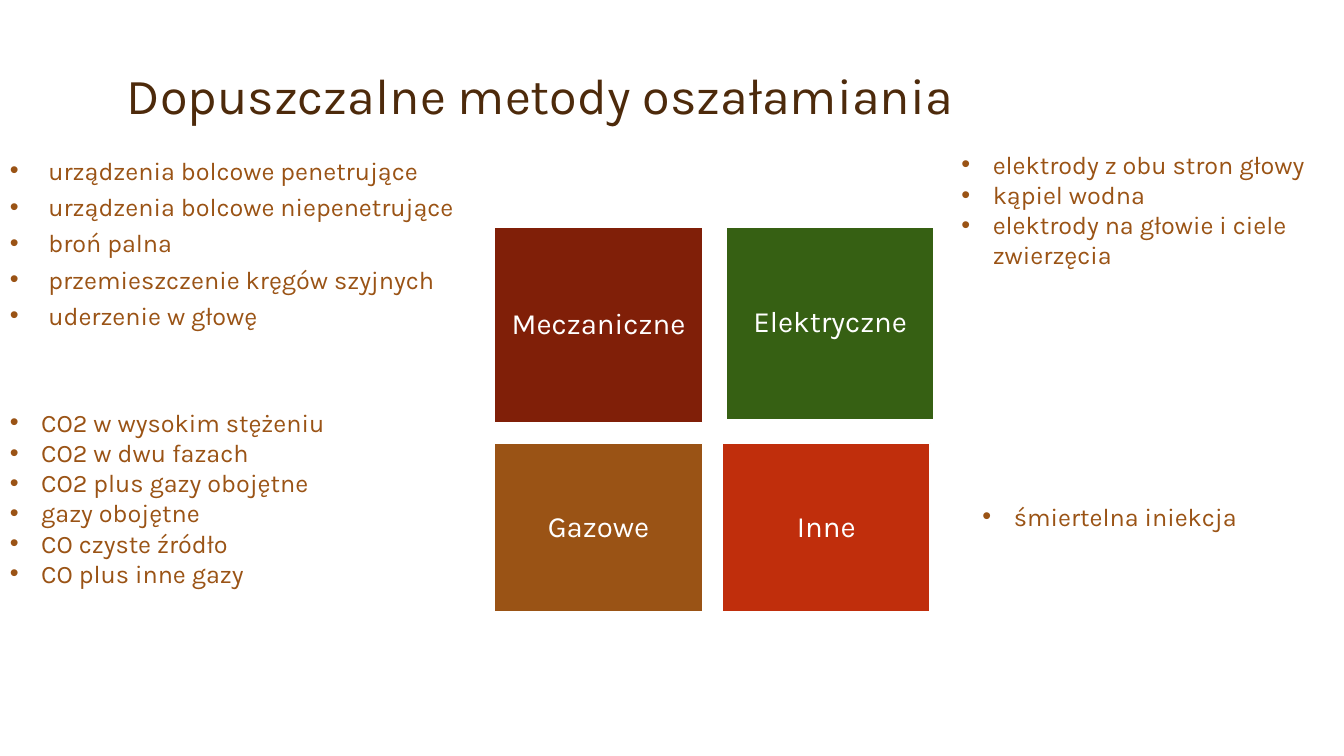
"""Build the slide on permitted stunning methods."""
import pptx
import pptx.util
import pptx.dml.color
import pptx.enum.shapes
import pptx.enum.text
import pptx.oxml.ns
import lxml.etree

Cm = pptx.util.Cm
Pt = pptx.util.Pt
Align = pptx.enum.text.PP_ALIGN
Anchor = pptx.enum.text.MSO_ANCHOR


def color(code):
    return pptx.dml.color.RGBColor.from_string(code)


def bullet(para, indent):
    props = para._p.get_or_add_pPr()
    props.set("marL", str(Cm(indent)))
    props.set("indent", str(-Cm(indent)))
    for tag, key, value in (("a:buFont", "typeface", "Arial"), ("a:buChar", "char", "•")):
        node = lxml.etree.SubElement(props, pptx.oxml.ns.qn(tag))
        node.set(key, value)


def write(frame, text, size=18, ink="9A5315", font="Karla", align=Align.LEFT,
          anchor=Anchor.TOP, space=1.0, indent=None):
    frame.word_wrap = True
    frame.vertical_anchor = anchor
    for n, line in enumerate(text.split("\n")):
        para = frame.add_paragraph() if n else frame.paragraphs[0]
        para.alignment = align
        para.line_spacing = space
        if indent:
            bullet(para, indent)
        run = para.add_run()
        run.text = line
        run.font.name = font
        run.font.size = Pt(size)
        run.font.color.rgb = color(ink)


class Deck:
    white = "FFFFFF"
    dark = "4D2A0B"

    def __init__(self, wide, high):
        self.show = pptx.Presentation()
        self.show.slide_width = Cm(wide)
        self.show.slide_height = Cm(high)
        self.slide = self.show.slides.add_slide(self.show.slide_layouts[6])

    def text(self, box, words, **style):
        area = self.slide.shapes.add_textbox(*map(Cm, box))
        write(area.text_frame, words, **style)

    def title(self, box, words):
        self.text(box, words, size=36, ink=self.dark, anchor=Anchor.BOTTOM, space=0.9)

    def list(self, box, items, indent=0.79, space=1.0):
        self.text(box, "\n".join(items), indent=indent, space=space)

    def tile(self, box, words, fill):
        rect = self.slide.shapes.add_shape(
            pptx.enum.shapes.MSO_SHAPE.RECTANGLE, *map(Cm, box))
        rect.shadow.inherit = False
        rect.fill.solid()
        rect.fill.fore_color.rgb = color(fill)
        rect.line.color.rgb = color(self.white)
        rect.line.width = Pt(1)
        frame = rect.text_frame
        frame.margin_left = frame.margin_right = Cm(0.23)
        frame.margin_top = frame.margin_bottom = Cm(0.23)
        write(frame, words, size=21, ink=self.white, align=Align.CENTER,
              anchor=Anchor.MIDDLE, space=0.9)


def main():
    deck = Deck(33.87, 19.05)
    deck.title((2.95, 0.84, 27.94, 2.44), "Dopuszczalne metody oszałamiania")
    deck.list((0, 3.63, 12.8, 5.38), (
        "urządzenia bolcowe penetrujące",
        "urządzenia bolcowe niepenetrujące",
        "broń palna",
        "przemieszczenie kręgów szyjnych",
        "uderzenie w głowę",
    ), indent=0.97, space=1.2)

    side = 5.23
    for left, top, high, name, fill in (
        (12.47, 5.72, 4.93, "Meczaniczne", "801F08"),
        (18.31, 5.72, 4.85, "Elektryczne", "366013"),
        (12.47, 11.18, 4.24, "Gazowe", "9A5315"),
        (18.21, 11.18, 4.24, "Inne", "C02E0C"),
    ):
        deck.tile((left, top, side, high), name, fill)

    deck.list((0, 10.13, 11.94, 4.88), (
        "CO2 w wysokim stężeniu",
        "CO2 w dwu fazach",
        "CO2 plus gazy obojętne",
        "gazy obojętne",
        "CO czyste źródło",
        "CO plus inne gazy",
    ))
    deck.list((23.98, 3.63, 9.5, 4.88), (
        "elektrody z obu stron głowy",
        "kąpiel wodna",
        "elektrody na głowie i ciele zwierzęcia",
    ))
    deck.list((24.51, 12.5, 8.43, 1.02), ("śmiertelna iniekcja",))
    deck.show.save("out.pptx")


if __name__ == "__main__":
    main()
